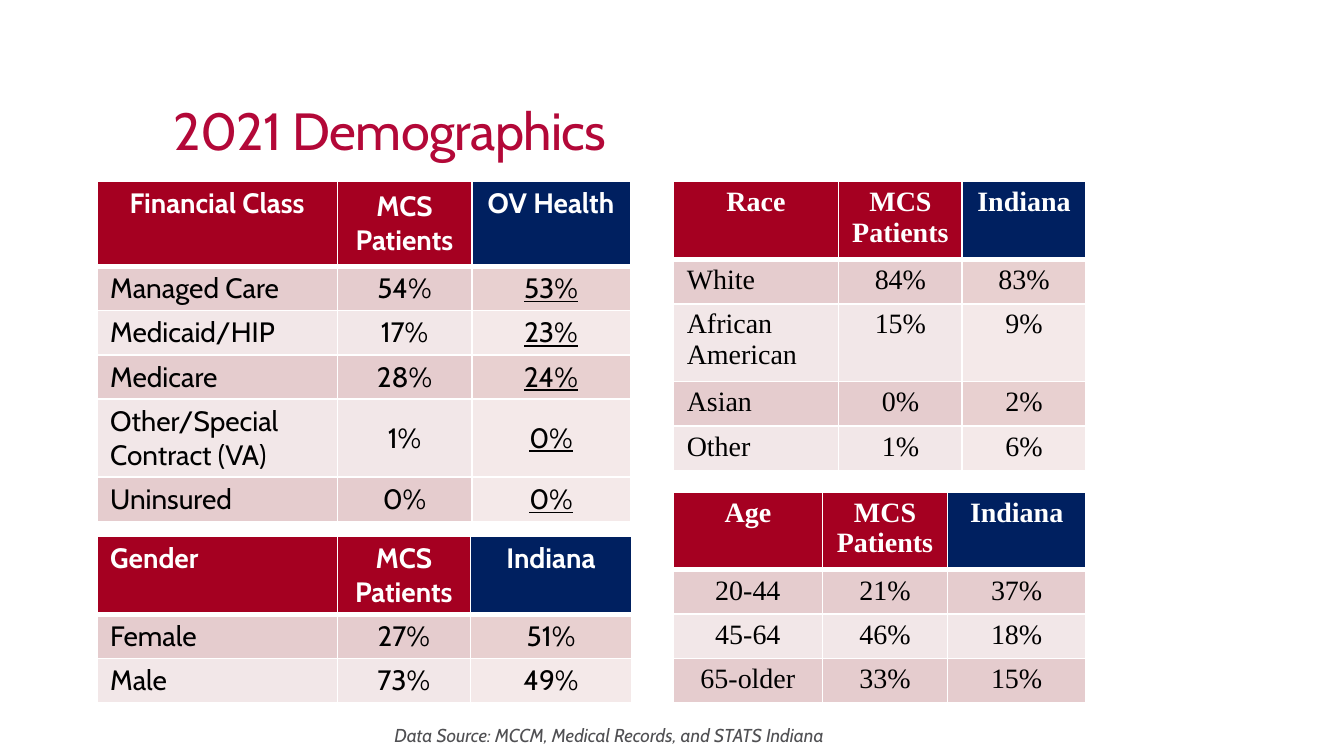
from copy import deepcopy
from dataclasses import dataclass

from lxml import etree
from pptx import Presentation
from pptx.dml.color import RGBColor
from pptx.enum.text import MSO_ANCHOR, PP_ALIGN
from pptx.oxml.ns import qn
from pptx.util import Inches, Pt

TOP, MIDDLE = MSO_ANCHOR.TOP, MSO_ANCHOR.MIDDLE
LEFT, CENTER = PP_ALIGN.LEFT, PP_ALIGN.CENTER


@dataclass(frozen=True)
class Theme:
    sans: str = "Cabin"
    serif: str = "Times New Roman"
    title: str = "B30838"
    red: str = "A50021"
    navy: str = "002060"
    white: str = "FFFFFF"
    black: str = "000000"
    gray: str = "505053"
    bands: tuple[str, ...] = ("E5CCCE", "F2E7E8")
    warm: tuple[str, ...] = ("E8D0D0", "F4E9E9")
    title_size: float = 28
    table_size: float = 15
    source_size: float = 10
    rule: float = 1
    header_rule: float = 3


THEME = Theme()


@dataclass(frozen=True)
class Grid:
    left: float
    top: float
    cols: tuple[float, ...]
    heights: tuple[float, ...]
    rows: tuple[tuple[str, ...], ...]
    font: str
    last_fills: tuple[str, ...] = THEME.warm
    anchor: int = TOP
    head_align: int = CENTER
    label_align: int = LEFT
    underline_last: bool = False


GRIDS = (
    Grid(0.72, 1.35, (1.79, 1, 1.18), (0.63, 0.31, 0.31, 0.31, 0.54, 0.27),
         (("Financial Class", "MCS Patients", "OV Health"),
          ("Managed Care", "54%", "53%"),
          ("Medicaid/HIP", "17%", "23%"),
          ("Medicare", "28%", "24%"),
          ("Other/Special Contract (VA)", "1%", "0%"),
          ("Uninsured", "0%", "0%")),
         THEME.sans, last_fills=THEME.warm * 2 + THEME.warm[1:],
         anchor=MIDDLE, underline_last=True),
    Grid(5.01, 1.35, (1.23, 0.92, 0.92), (0.45, 0.25, 0.45, 0.25, 0.25),
         (("Race", "MCS Patients", "Indiana"),
          ("White", "84%", "83%"),
          ("African American", "15%", "9%"),
          ("Asian", "0%", "2%"),
          ("Other", "1%", "6%")),
         THEME.serif),
    Grid(0.72, 3.99, (1.79, 0.99, 1.2), (0.58, 0.33, 0.33),
         (("Gender", "MCS Patients", "Indiana"),
          ("Female", "27%", "51%"),
          ("Male", "73%", "49%")),
         THEME.sans, head_align=LEFT),
    Grid(5.01, 3.66, (1.11, 0.93, 1.03), (0.41, 0.23, 0.23, 0.23),
         (("Age", "MCS Patients", "Indiana"),
          ("20-44", "21%", "37%"),
          ("45-64", "46%", "18%"),
          ("65-older", "33%", "15%")),
         THEME.serif, last_fills=THEME.bands, label_align=CENTER),
)


def write(tf, text: str, color: str, align: int, **formats):
    p = tf.paragraphs[0]
    p.alignment = align
    r = p.add_run()
    r.text = text
    for name, value in formats.items():
        setattr(r.font, name, value)
    r.font.color.rgb = RGBColor.from_string(color)
    rPr = r.font._element
    for script in ("ea", "cs"):
        etree.SubElement(rPr, qn(f"a:{script}"), typeface=r.font.name)
    end = etree.SubElement(p._p, qn("a:endParaRPr"), dict(rPr.attrib))
    end.extend([deepcopy(child) for child in rPr])
    return p, r


def add_borders(cell, widths: dict[str, float]) -> None:
    tcPr = cell._tc.get_or_add_tcPr()
    for side, width in widths.items():
        ln = etree.SubElement(tcPr, qn(f"a:ln{side}"), w=str(Pt(width)))
        fill = etree.SubElement(ln, qn("a:solidFill"))
        etree.SubElement(fill, qn("a:srgbClr"), val=THEME.white)


def cell_fill(grid: Grid, row: int, is_last: bool) -> str:
    if row == 0:
        return THEME.navy if is_last else THEME.red
    fills = grid.last_fills if is_last else THEME.bands
    return fills[(row - 1) % len(fills)]


def draw_cell(cell, grid: Grid, row: int, col: int) -> None:
    is_header = row == 0
    is_last = col == len(grid.cols) - 1
    add_borders(cell, {
        "L": THEME.rule,
        "R": THEME.rule,
        "T": THEME.header_rule if row == 1 else THEME.rule,
        "B": THEME.header_rule if is_header else THEME.rule,
    })
    cell.fill.solid()
    cell.fill.fore_color.rgb = RGBColor.from_string(cell_fill(grid, row, is_last))
    layout = {
        "margin_left": Inches(0.1), "margin_right": Inches(0.1),
        "margin_top": Inches(0.04), "margin_bottom": Inches(0.04),
        "vertical_anchor": TOP if is_header and col != 1 else grid.anchor,
    }
    for name, value in layout.items():
        setattr(cell, name, value)
    label_align = grid.head_align if is_header else grid.label_align
    write(cell.text_frame, grid.rows[row][col],
          THEME.white if is_header else THEME.black,
          label_align if col == 0 else CENTER,
          name=grid.font, size=Pt(THEME.table_size), bold=is_header,
          underline=grid.underline_last and is_last and not is_header)


def draw_grid(s, grid: Grid) -> None:
    table = s.shapes.add_table(
        len(grid.rows), len(grid.cols), Inches(grid.left), Inches(grid.top),
        Inches(sum(grid.cols)), Inches(sum(grid.heights))).table
    table.horz_banding = False
    for column, width in zip(table.columns, grid.cols):
        column.width = Inches(width)
    for row, height in enumerate(grid.heights):
        table.rows[row].height = Inches(height)
        for col in range(len(grid.cols)):
            draw_cell(table.cell(row, col), grid, row, col)


def add_box(s, left: float, top: float, width: float, height: float):
    sp = s.shapes.add_textbox(Inches(left), Inches(top), Inches(width), Inches(height))
    sp.text_frame.word_wrap = True
    return sp.text_frame


def draw_title(s) -> None:
    tf = add_box(s, 1.29, 0.56, 3.4, 0.87)
    tf.vertical_anchor = MIDDLE
    for side in ("left", "right", "top", "bottom"):
        setattr(tf, f"margin_{side}", 0)
    p, r = write(tf, "2021 Demographics", THEME.title, LEFT,
                 name=THEME.sans, size=Pt(THEME.title_size))
    p.line_spacing = 0.9
    r.font._element.set("spc", "-30")


def draw_source(s) -> None:
    tf = add_box(s, 2.71, 5.34, 3.64, 0.27)
    write(tf, "Data Source: MCCM, Medical Records, and STATS Indiana",
          THEME.gray, CENTER, name=THEME.sans,
          size=Pt(THEME.source_size), italic=True)


def main() -> None:
    prs = Presentation()
    prs.slide_width, prs.slide_height = Inches(10), Inches(10 * 9 / 16)
    s = prs.slides.add_slide(prs.slide_layouts[6])
    draw_title(s)
    for grid in GRIDS:
        draw_grid(s, grid)
    draw_source(s)
    prs.save("out.pptx")


if __name__ == "__main__":
    main()
